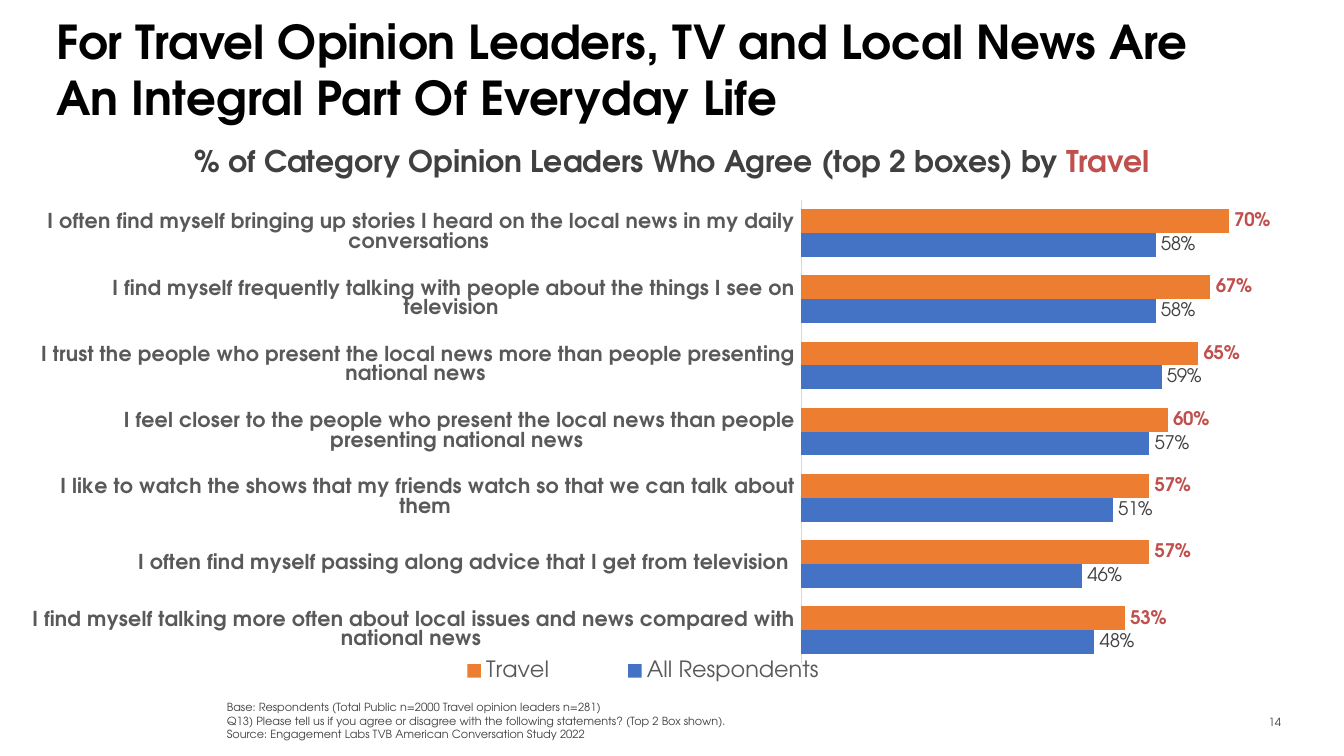
from dataclasses import dataclass

from lxml.etree import SubElement
from pptx import Presentation
from pptx.chart.data import CategoryChartData
from pptx.dml.color import RGBColor
from pptx.enum.chart import XL_CHART_TYPE, XL_LABEL_POSITION, XL_LEGEND_POSITION, XL_TICK_MARK
from pptx.enum.text import MSO_ANCHOR, PP_ALIGN
from pptx.oxml.ns import qn
from pptx.util import Inches, Pt

WIDTH = 10
HEIGHT = WIDTH * 9 / 16
FACE = "TeX Gyre Adventor"
BLACK, DARK, GREY, PALE = "000000", "404040", "595959", "D9D9D9"
RED, ORANGE, BLUE = "C0504D", "ED7D31", "4472C4"

AGREEMENT = [
    ("I find myself talking more often about local issues and news compared with national news ", 0.48, 0.53),
    ("I often find myself passing along advice that I get from television ", 0.46, 0.57),
    ("I like to watch the shows that my friends watch so that we can talk about them ", 0.51, 0.57),
    ("I feel closer to the people who present the local news than people presenting national news ", 0.57, 0.6),
    ("I trust the people who present the local news more than people presenting national news ", 0.59, 0.65),
    ("I find myself frequently talking with people about the things I see on television ", 0.58, 0.67),
    ("I often find myself bringing up stories I heard on the local news in my daily conversations ", 0.58, 0.7),
]
FOOTNOTES = [
    "Base: Respondents (Total Public n=2000 Travel opinion leaders n=281)",
    "Q13) Please tell us if you agree or disagree with the following statements? (Top 2 Box shown).",
    "Source: Engagement Labs TVB American Conversation Study 2022",
]


def rgb(value):
    """Turn a hex string into a colour."""
    return RGBColor.from_string(value)


def assign(target, **values):
    """Set each named format value on the target."""
    for name, value in values.items():
        setattr(target, name, value)


def place(parent, successor, **percents):
    """Give a chart part a manual layout in percent of the chart."""
    for old in parent.findall(qn("c:layout")):
        parent.remove(old)
    layout = SubElement(parent, qn("c:layout"))
    manual = SubElement(layout, qn("c:manualLayout"))
    if successor == "c:barChart":
        SubElement(manual, qn("c:layoutTarget")).set("val", "inner")
    for mode in ("xMode", "yMode"):
        SubElement(manual, qn(f"c:{mode}")).set("val", "edge")
    for name, percent in percents.items():
        SubElement(manual, qn(f"c:{name}")).set("val", str(percent / 100))
    parent.find(qn(successor)).addprevious(layout)


@dataclass
class Style:
    """Hold the look and the current slide, and draw each kind of element."""

    slide: object
    face: str = FACE

    def box(self, left, top, width, height):
        """Convert percentages of the slide into lengths."""
        return (Inches(left * WIDTH / 100), Inches(top * HEIGHT / 100),
                Inches(width * WIDTH / 100), Inches(height * HEIGHT / 100))

    def font(self, font, size, color, bold=False):
        """Apply the typeface with a size, colour and weight."""
        assign(font, name=self.face, size=Pt(size), bold=bold)
        font.color.rgb = rgb(color)

    def text(self, area, lines, size, bold=False, align=PP_ALIGN.LEFT, **frame_format):
        """Add a text box whose lines are lists of wording and colour pairs."""
        frame = self.slide.shapes.add_textbox(*self.box(*area)).text_frame
        assign(frame, word_wrap=True, **frame_format)
        for index, line in enumerate(lines):
            paragraph = frame.add_paragraph() if index else frame.paragraphs[0]
            paragraph.alignment = align
            for wording, color in line:
                run = paragraph.add_run()
                run.text = wording
                self.font(run.font, size, color, bold)

    def bars(self, area, rows, series_looks):
        """Add the clustered bar chart with labelled series."""
        statements, *shares = zip(*rows)
        data = CategoryChartData(number_format="0%")
        data.categories = statements
        for (name, *_), values in zip(series_looks, shares):
            data.add_series(name, values)
        chart = self.slide.shapes.add_chart(
            XL_CHART_TYPE.BAR_CLUSTERED, *self.box(*area), data).chart
        assign(chart, has_title=False, has_legend=True)
        self.font(chart.font, 10, BLACK)
        self.axes(chart)
        assign(chart.plots[0], gap_width=78, overlap=0, vary_by_categories=False)
        for series, (_, fill, label_color, bold) in zip(chart.plots[0].series, series_looks):
            series.format.fill.solid()
            series.format.fill.fore_color.rgb = rgb(fill)
            labels = series.data_labels
            assign(labels, show_value=True, number_format="0%",
                   number_format_is_linked=False, position=XL_LABEL_POSITION.OUTSIDE_END)
            self.font(labels.font, 10, label_color, bold)
        legend = chart.legend
        assign(legend, position=XL_LEGEND_POSITION.BOTTOM, include_in_layout=False)
        self.font(legend.font, 12, GREY)
        plot_area = chart.plots[0]._element.getparent()
        place(plot_area, "c:barChart", x=60, y=1.8, w=38.2, h=88)
        place(legend._element, "c:overlay", x=28.3, y=87.2, w=38.7, h=8)

    def axes(self, chart):
        """Format the statement axis and hide the value axis."""
        statement_axis, share_axis = chart.category_axis, chart.value_axis
        assign(statement_axis, major_tick_mark=XL_TICK_MARK.NONE,
               minor_tick_mark=XL_TICK_MARK.NONE, has_major_gridlines=False)
        self.font(statement_axis.tick_labels.font, 11, GREY, True)
        statement_axis.format.line.color.rgb = rgb(PALE)
        statement_axis.format.line.width = Pt(0.75)
        assign(share_axis, visible=False, has_major_gridlines=False,
               minimum_scale=0, maximum_scale=0.8)


def main():
    """Build and save the slide."""
    deck = Presentation()
    assign(deck, slide_width=Inches(WIDTH), slide_height=Inches(HEIGHT))
    style = Style(deck.slides.add_slide(deck.slide_layouts[6]))
    style.text((90.4, 92.8, 5.9, 5.3), [[("14", "3C3C3A")]], 6,
               align=PP_ALIGN.RIGHT, vertical_anchor=MSO_ANCHOR.MIDDLE)
    headline = "For Travel Opinion Leaders, TV and Local News Are An Integral Part Of Everyday Life"
    style.text((3.2, 1.7, 90.2, 14), [[(headline, BLACK)]], 25, bold=True, margin_top=0)
    subtitle = [("% of Category Opinion Leaders Who Agree (top 2 boxes) by ", DARK), ("Travel", RED)]
    style.text((0, 18, 100, 6.6), [subtitle], 16, bold=True, align=PP_ALIGN.CENTER)
    style.text((15.9, 91.8, 81.4, 7.1), [[(note, DARK)] for note in FOOTNOTES], 6,
               vertical_anchor=MSO_ANCHOR.BOTTOM)
    style.bars((2.4, 25.2, 95.3, 69.7), AGREEMENT,
               [("All Respondents", BLUE, DARK, False), ("Travel", ORANGE, RED, True)])
    deck.save("out.pptx")


if __name__ == "__main__":
    main()
